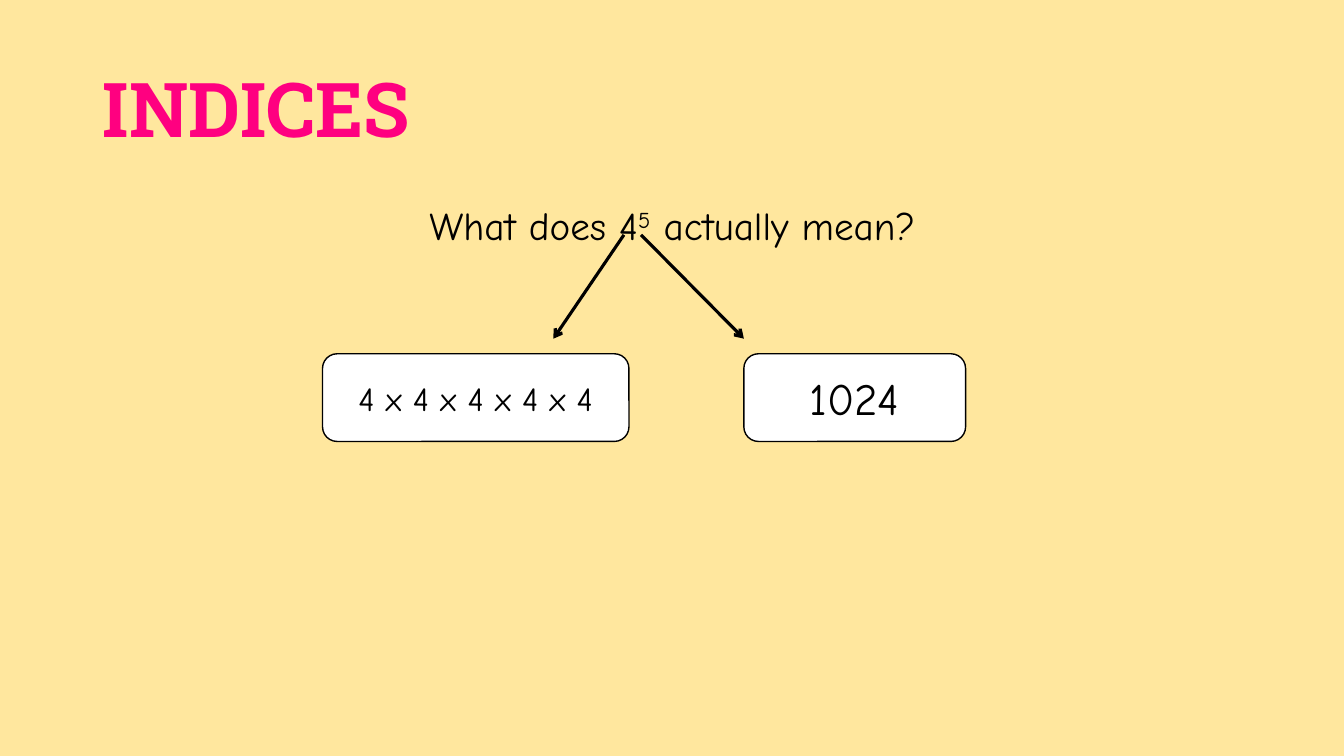
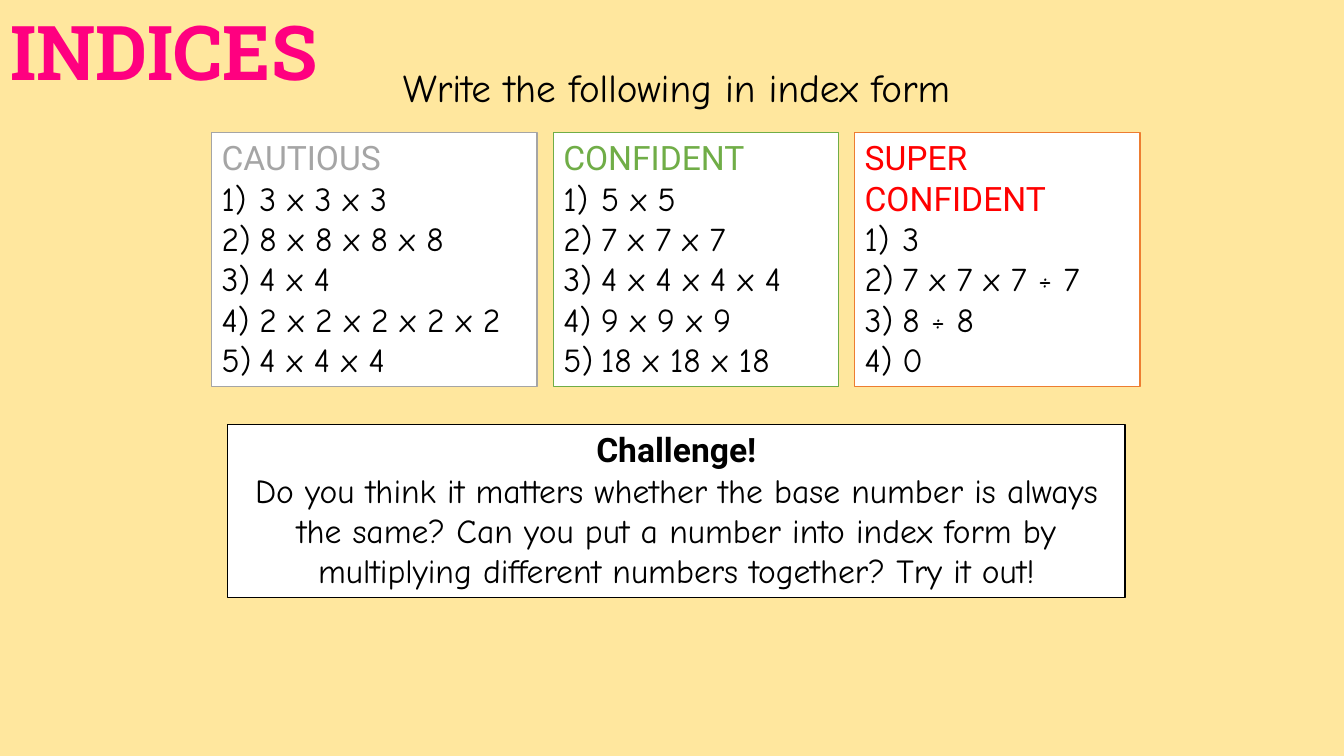
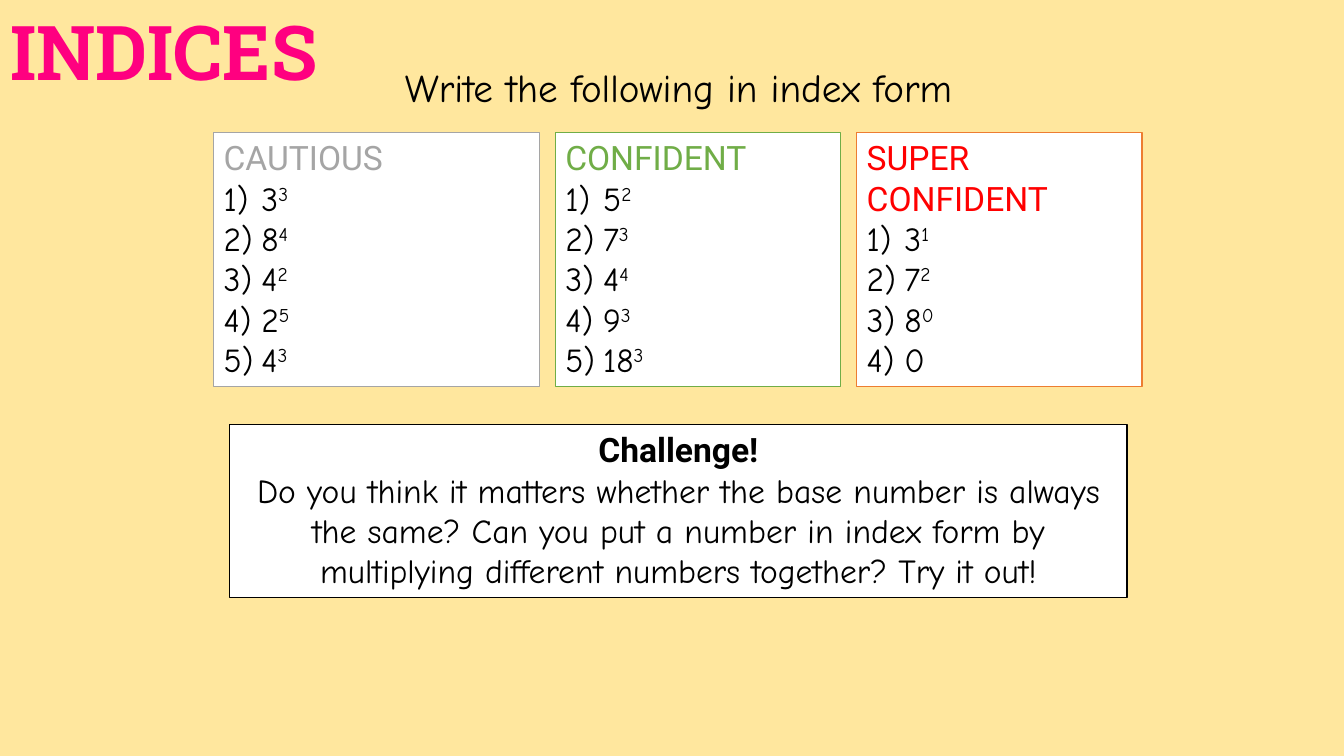
from lxml.etree import SubElement
from pptx import Presentation
from pptx.dml.color import RGBColor
from pptx.enum.shapes import MSO_CONNECTOR, MSO_SHAPE
from pptx.enum.text import MSO_ANCHOR, MSO_AUTO_SIZE, PP_ALIGN
from pptx.oxml.ns import qn
from pptx.util import Pt

CREAM = RGBColor(0xFF, 0xE7, 0x9E)
PINK = RGBColor(0xFF, 0x00, 0x80)
BLACK = RGBColor(0x00, 0x00, 0x00)
WHITE = RGBColor(0xFF, 0xFF, 0xFF)
GREY = RGBColor(0xA5, 0xA5, 0xA5)
GREEN = RGBColor(0x70, 0xAD, 0x47)
ORANGE = RGBColor(0xED, 0x7D, 0x31)
RED = RGBColor(0xFF, 0x00, 0x00)

TITLE_FONT = "Roboto Slab"
HEADING_FONT = "Roboto"
TEXT_FONT = "Comic Neue"

CARD_LEFT, CARD_TOP, CARD_HEIGHT, CARD_GAP = 151.2, 94.5, 181.44, 11.52
NUMBER_INDENT = 27
LEVELS = [
    ("CAUTIOUS", GREY, GREY, 232.56),
    ("CONFIDENT", GREEN, GREEN, 203.76),
    ("SUPER CONFIDENT", RED, ORANGE, 203.76),
]
PRODUCTS = [
    ["3 x 3 x 3", "8 x 8 x 8 x 8", "4 x 4", "2 x 2 x 2 x 2 x 2", "4 x 4 x 4"],
    ["5 x 5", "7 x 7 x 7", "4 x 4 x 4 x 4", "9 x 9 x 9", "18 x 18 x 18"],
    ["3", "7 x 7 x 7 ÷ 7", "8 ÷ 8", "0"],
]
POWERS = [
    ["3^3", "8^4", "4^2", "2^5", "4^3"],
    ["5^2", "7^3", "4^4", "9^3", "18^3"],
    ["3^1", "7^2", "8^0", "0"],
]
CHALLENGE = (
    "Do you think it matters whether the base number is always the same? "
    "Can you put a number {} index form by multiplying different numbers "
    "together? Try it out!"
)


def place(shape, left, top, width, height):
    """Move and size a shape, in points."""
    shape.left, shape.top = Pt(left), Pt(top)
    shape.width, shape.height = Pt(width), Pt(height)


def set_list_style(paragraph, numbered):
    """Number a paragraph as 1), or take its bullet away."""
    indent = Pt(NUMBER_INDENT) if numbered else 0
    properties = paragraph._p.get_or_add_pPr()
    properties.set("marL", str(indent))
    properties.set("indent", str(-indent))
    if numbered:
        SubElement(properties, qn("a:buFont"), typeface="+mj-lt")
        SubElement(properties, qn("a:buAutoNum"), type="arabicParenR")
    else:
        SubElement(properties, qn("a:buNone"))


def write(frame, text, font=TEXT_FONT, size=24, color=BLACK, bold=False,
          align=PP_ALIGN.LEFT, spacing=1.0, numbered=False):
    """Add a paragraph in which the character after ^ is raised."""
    paragraph = frame.paragraphs[0]
    if paragraph.runs:
        paragraph = frame.add_paragraph()
    set_list_style(paragraph, numbered)
    paragraph.alignment = align
    paragraph.line_spacing = spacing
    paragraph.space_before = Pt(0)
    base, *powers = text.split("^")
    pieces = [(base, False)]
    for power in powers:
        pieces += [(power[0], True), (power[1:], False)]
    for piece, raised in pieces:
        if not piece:
            continue
        run = paragraph.add_run()
        run.text = piece
        run.font.name = font
        run.font.size = Pt(size)
        run.font.bold = bold
        run.font.color.rgb = color
        if raised:
            run._r.get_or_add_rPr().set("baseline", "30000")


def add_box(slide, bounds, outline=BLACK, preset=MSO_SHAPE.RECTANGLE,
            anchor=MSO_ANCHOR.TOP):
    """Add a white outlined box and return its text frame."""
    box = slide.shapes.add_shape(preset, *map(Pt, bounds))
    box.shadow.inherit = False
    box.fill.solid()
    box.fill.fore_color.rgb = WHITE
    box.line.color.rgb = outline
    box.line.width = Pt(1)
    frame = box.text_frame
    frame.word_wrap = True
    frame.vertical_anchor = anchor
    return frame


def add_arrow(slide, *ends):
    """Add a black arrow from one point to another."""
    arrow = slide.shapes.add_connector(MSO_CONNECTOR.STRAIGHT, *map(Pt, ends))
    arrow.line.color.rgb = BLACK
    arrow.line.width = Pt(2.25)
    SubElement(arrow.line._get_or_add_ln(), qn("a:tailEnd"), type="arrow")
    SubElement(arrow._element.spPr, qn("a:effectLst"))


def add_slide(deck, prompt, title_at, prompt_bounds):
    """Add a slide with the shared title and a centred prompt."""
    slide = deck.slides.add_slide(deck.slide_layouts[1])
    title, body = slide.shapes.title, slide.placeholders[1]
    place(title, *title_at, 828, 104.4)
    place(body, *prompt_bounds)
    for holder, anchor in ((title, MSO_ANCHOR.MIDDLE), (body, MSO_ANCHOR.TOP)):
        holder.text_frame.auto_size = MSO_AUTO_SIZE.NONE
        holder.text_frame.vertical_anchor = anchor
    write(title.text_frame, "INDICES", font=TITLE_FONT, size=54, color=PINK,
          bold=True, spacing=0.9)
    write(body.text_frame, prompt, size=28, align=PP_ALIGN.CENTER, spacing=0.9)
    return slide


def add_meaning_slide(deck):
    """Show a power as a product and as a value."""
    slide = add_slide(deck, "What does 4^5 actually mean?",
                      (66.24, 28.8), (66.24, 144, 828, 342.72))
    meanings = [
        ("4 x 4 x 4 x 4 x 4", 24, 230.4, 218.88, (445.68, 395.28)),
        ("1024", 32, 531.36, 158.4, (457.92, 531.36)),
    ]
    for meaning, size, left, width, (start, end) in meanings:
        frame = add_box(slide, (left, 252.72, width, 62.64),
                        preset=MSO_SHAPE.ROUNDED_RECTANGLE,
                        anchor=MSO_ANCHOR.MIDDLE)
        write(frame, meaning, size=size, align=PP_ALIGN.CENTER)
        add_arrow(slide, start, 167.76, end, 241.92)


def add_exercise_slide(deck, exercises, preposition, shift=0):
    """Show three levels of questions above a challenge."""
    slide = add_slide(deck, "Write the following in index form",
                      (0, -12), (159.12 + shift, 45.36, 648, 47.52))
    left = CARD_LEFT + shift
    for (level, color, outline, width), questions in zip(LEVELS, exercises):
        card = add_box(slide, (left, CARD_TOP, width, CARD_HEIGHT), outline)
        write(card, level, font=HEADING_FONT, color=color)
        for question in questions:
            write(card, question, numbered=True)
        left += width + CARD_GAP
    challenge = add_box(slide, (162.72 + shift, 303.12, 640.8, 123.84))
    write(challenge, "Challenge!", font=HEADING_FONT, bold=True,
          align=PP_ALIGN.CENTER)
    write(challenge, CHALLENGE.format(preposition), align=PP_ALIGN.CENTER)


def main():
    """Build and save the lesson."""
    deck = Presentation()
    deck.slide_width, deck.slide_height = Pt(960), Pt(540)
    background = deck.slide_master.background.fill
    background.solid()
    background.fore_color.rgb = CREAM
    add_meaning_slide(deck)
    add_exercise_slide(deck, PRODUCTS, "into")
    add_exercise_slide(deck, POWERS, "in", shift=1.44)
    deck.save("out.pptx")


if __name__ == "__main__":
    main()
